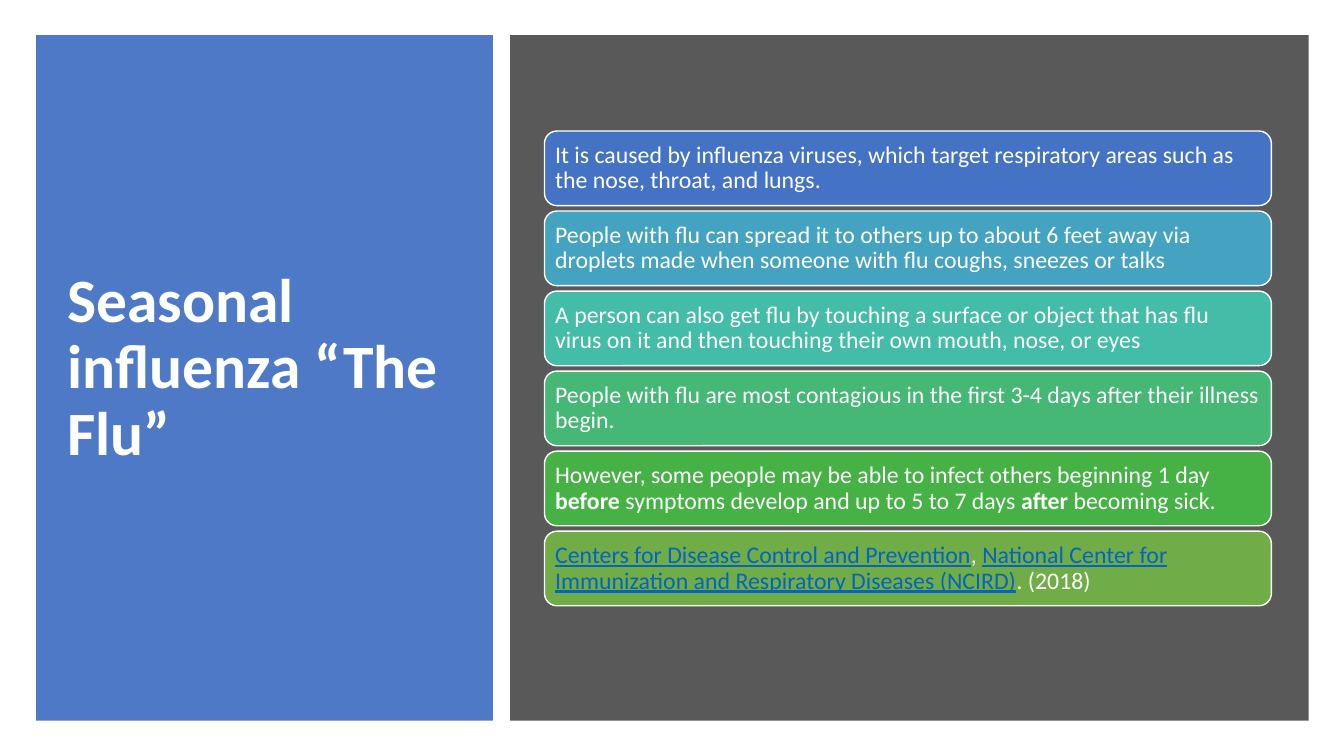
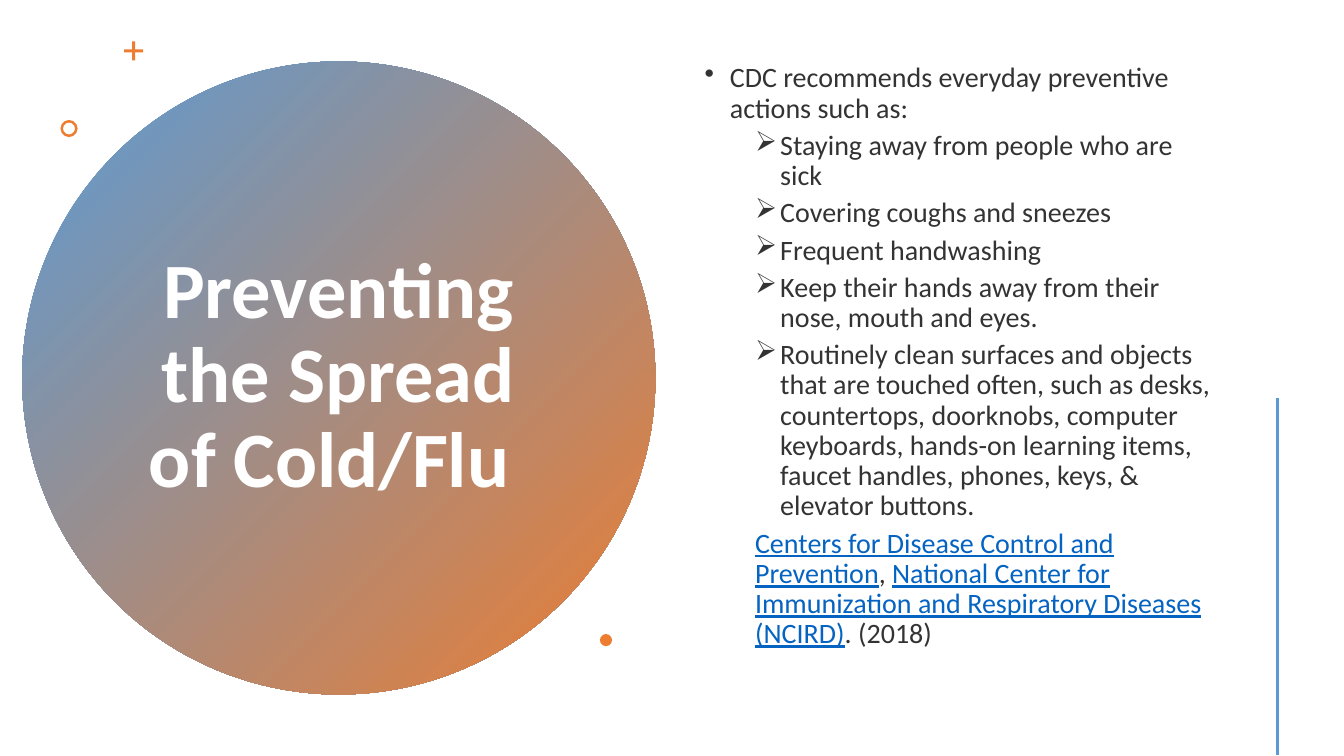
"""Build two slides about seasonal flu and how to prevent its spread."""
from dataclasses import dataclass

from lxml.etree import SubElement
from pptx import Presentation
from pptx.dml.color import RGBColor
from pptx.enum.shapes import MSO_CONNECTOR, MSO_SHAPE as Preset
from pptx.enum.text import MSO_ANCHOR as Anchor, PP_ALIGN as Align
from pptx.oxml.ns import qn
from pptx.util import Emu, Pt

EMU_PER_PX = 9144


@dataclass(frozen=True)
class Theme:
    """Hold the colours and type sizes that the slides share."""
    font: str = "Calibri"
    white: str = "FFFFFF"
    ink: str = "333333"
    link: str = "0563C1"
    blue_panel: str = "4D79C7"
    gray_panel: str = "595959"
    sky: str = "5B9BD5"
    orange: str = "ED7D31"
    cards: tuple = ("4472C4", "44A3C0", "43BDA7", "44B874", "46B246", "70AD47")
    panel_title: int = 44
    circle_title: int = 56
    body: int = 20
    card: int = 17


THEME = Theme()
BOLD = {"bold": True}
LINK = {"underline": True, "color": THEME.link}
SOURCE = [
    ("Centers for Disease Control and Prevention", LINK),
    (", ", {}),
    ("National Center for Immunization and Respiratory Diseases (NCIRD)", LINK),
    (". (2018)", {}),
]
FACTS = [
    [("It is caused by influenza viruses, which target respiratory areas "
      "such as the nose, throat, and lungs.", {})],
    [("People with flu can spread it to others up to about 6 feet away via "
      "droplets made when someone with flu coughs, sneezes or talks", {})],
    [("A person can also get flu by touching a surface or object that has flu "
      "virus on it and then touching their own mouth, nose, or eyes", {})],
    [("People with flu are most contagious in the first 3-4 days after their "
      "illness begin.", {})],
    [("However, some people may be able to infect others beginning 1 day ", {}),
     ("before ", BOLD),
     ("symptoms develop and up to 5 to 7 days ", {}),
     ("after ", BOLD),
     ("becoming sick.", {})],
    SOURCE,
]
ACTIONS = [
    "Staying away from people who are sick",
    "Covering coughs and sneezes",
    "Frequent handwashing",
    "Keep their hands away from their nose, mouth and eyes.",
    "Routinely clean surfaces and objects that are touched often, such as "
    "desks, countertops, doorknobs, computer keyboards, hands-on learning "
    "items, faucet handles, phones, keys, & elevator buttons.",
]


def px(*lengths):
    """Turn px lengths into a list of EMU lengths."""
    return [Emu(round(length * EMU_PER_PX)) for length in lengths]


def set_all(target, **values):
    """Set each named attribute on the target."""
    for name, value in values.items():
        setattr(target, name, value)


def add_runs(paragraph, runs, size, color):
    """Write (text, style) runs, letting a style override the base format."""
    for text, style in runs:
        run = paragraph.add_run()
        run.text = text
        values = {"name": THEME.font, "size": Pt(size), "color": color} | style
        run.font.color.rgb = RGBColor.from_string(values.pop("color"))
        set_all(run.font, **values)


def add_shape(slide, preset, box, fill, outline=None, adjust=None):
    """Add a preset shape with a solid fill, or a gradient for two colours."""
    shape = slide.shapes.add_shape(preset, *px(*box))
    shape.shadow.inherit = False
    if isinstance(fill, tuple):
        shape.fill.gradient()
        shape.fill.gradient_angle = 315
        for stop, color in zip(shape.fill.gradient_stops, fill):
            stop.color.rgb = RGBColor.from_string(color)
    else:
        shape.fill.solid()
        shape.fill.fore_color.rgb = RGBColor.from_string(fill)
    if outline:
        shape.line.color.rgb = RGBColor.from_string(outline)
        shape.line.width = Pt(1)
    else:
        shape.line.fill.background()
    if adjust is not None:
        shape.adjustments[0] = adjust
    return shape


def add_text_box(slide, box):
    """Add a wrapping, vertically centred text box and return its frame."""
    frame = slide.shapes.add_textbox(*px(*box)).text_frame
    set_all(frame, word_wrap=True, vertical_anchor=Anchor.MIDDLE)
    return frame


def add_title(slide, box, text, size, alignment=Align.LEFT):
    """Add a bold white title."""
    paragraph = add_text_box(slide, box).paragraphs[0]
    set_all(paragraph, alignment=alignment, line_spacing=0.9)
    add_runs(paragraph, [(text, BOLD)], size, THEME.white)


def add_card(slide, box, fill, runs):
    """Add a rounded card holding one fact."""
    card = add_shape(slide, Preset.ROUNDED_RECTANGLE, box, fill, THEME.white)
    frame = card.text_frame
    inset, = px(7)
    set_all(frame, word_wrap=True, vertical_anchor=Anchor.MIDDLE,
            margin_left=inset, margin_right=inset,
            margin_top=inset, margin_bottom=inset)
    paragraph = frame.paragraphs[0]
    set_all(paragraph, alignment=Align.LEFT, line_spacing=0.9)
    add_runs(paragraph, runs, THEME.card, THEME.white)


def add_body_line(paragraph, runs, margin, space_before, bullet=None):
    """Fill one body paragraph, with a hanging bullet if one is given."""
    set_all(paragraph, line_spacing=0.9, space_before=Pt(space_before))
    properties = paragraph._p.get_or_add_pPr()
    left, indent = px(margin, -25 if bullet else 0)
    properties.set("marL", str(left))
    properties.set("indent", str(indent))
    if bullet:
        SubElement(properties, qn("a:buChar")).set("char", bullet)
    add_runs(paragraph, runs, THEME.body, THEME.ink)


def add_line(slide, ends, color, width):
    """Add a straight line without a shadow."""
    line = slide.shapes.add_connector(MSO_CONNECTOR.STRAIGHT, *px(*ends))
    line.line.color.rgb = RGBColor.from_string(color)
    line.line.width = Pt(width)
    SubElement(line._element.spPr, qn("a:effectLst"))


def build_flu_slide(slide):
    """Build the slide of stacked flu facts."""
    add_shape(slide, Preset.RECTANGLE, (36, 35, 453, 680), THEME.blue_panel)
    add_title(slide, (57, 64, 407, 604), "Seasonal influenza “The Flu”",
              THEME.panel_title)
    add_shape(slide, Preset.RECTANGLE, (506, 35, 792, 680), THEME.gray_panel)
    first_top, last_top = 130, 527
    pitch = (last_top - first_top) / (len(FACTS) - 1)
    for index, (fill, runs) in enumerate(zip(THEME.cards, FACTS)):
        box = (540, first_top + index * pitch, 721, 74)
        add_card(slide, box, fill, runs)


def build_prevention_slide(slide):
    """Build the slide of preventive actions."""
    add_shape(slide, Preset.OVAL, (22, 61, 628, 628),
              (THEME.sky, THEME.orange))
    add_title(slide, (136, 141, 399, 467), "Preventing the Spread of Cold/Flu ",
              THEME.circle_title, Align.CENTER)
    for preset, box, adjust in (
        (Preset.CROSS, (123, 41, 19, 19), 0.42),
        (Preset.DONUT, (60, 119, 17, 17), 0.15),
        (Preset.OVAL, (595, 629, 12, 12), None),
    ):
        add_shape(slide, preset, box, THEME.orange, adjust=adjust)
    frame = add_text_box(slide, (689, 57, 522, 594))
    intro = "CDC recommends everyday preventive actions such as:"
    add_body_line(frame.paragraphs[0], [(intro, {})], 25, 10, "•")
    for action in ACTIONS:
        add_body_line(frame.add_paragraph(), [(action, {})], 75, 5, "➢")
    add_body_line(frame.add_paragraph(), SOURCE, 50, 5)
    add_line(slide, (1267, 395, 1267, 749), THEME.sky, 2)


def main():
    """Build and save the presentation."""
    presentation = Presentation()
    width, height = px(1333, 750)
    set_all(presentation, slide_width=width, slide_height=height)
    blank = presentation.slide_layouts[6]
    for build in (build_flu_slide, build_prevention_slide):
        build(presentation.slides.add_slide(blank))
    presentation.save("out.pptx")


if __name__ == "__main__":
    main()
